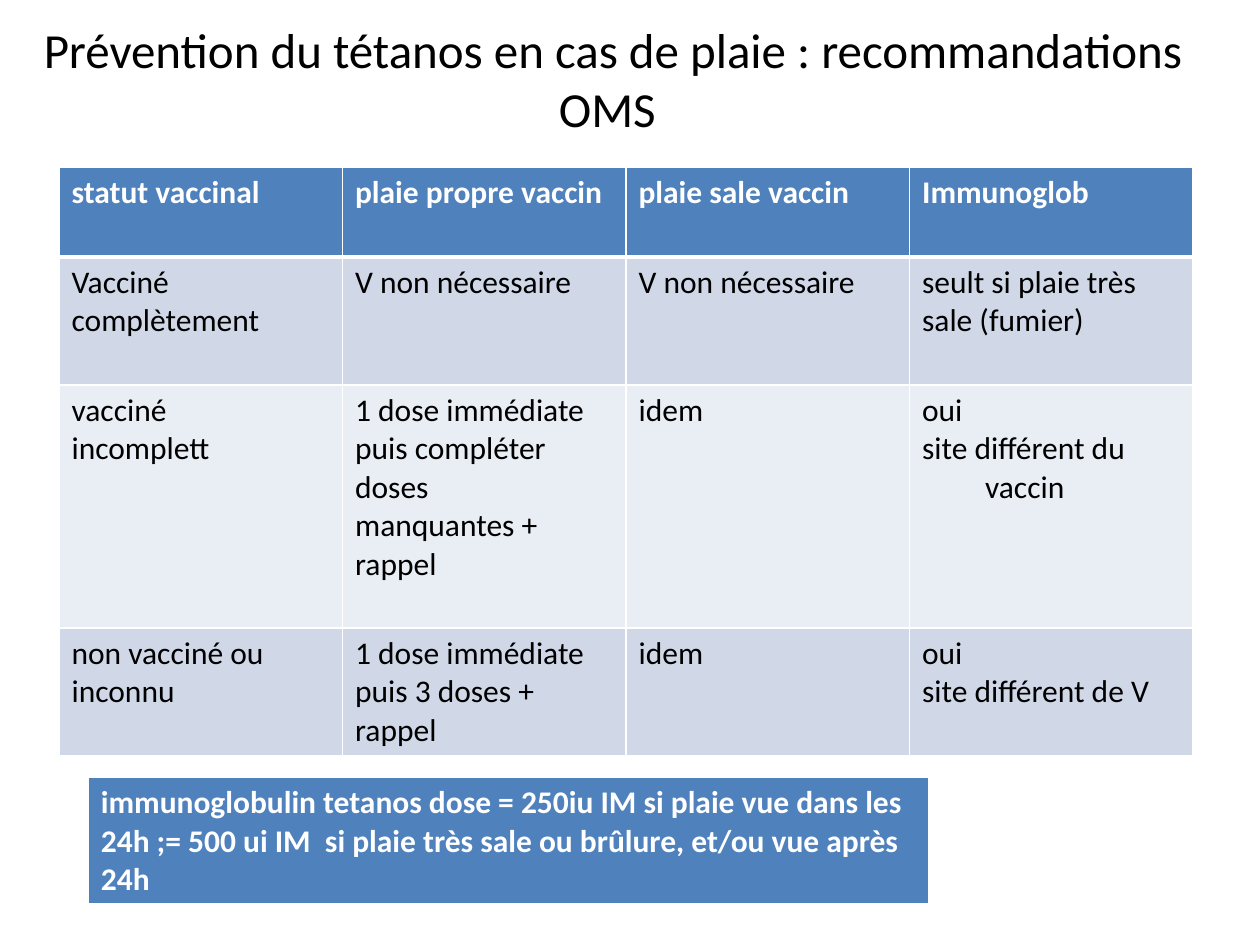
from pptx import Presentation
from pptx import util as u
from pptx.dml.color import RGBColor
from pptx.enum import text as t
from pptx.oxml import parse_xml
from pptx.oxml.ns import nsdecls

HUES = {"ink": "000000", "white": "FFFFFF", "head": "4F81BD",
        "odd": "D0D8E8", "even": "E9EDF4"}
FONT = "Calibri"
GRID = [
    ["statut vaccinal", "plaie propre vaccin", "plaie sale vaccin", "Immunoglob"],
    ["Vacciné complètement", "V non nécessaire", "V non nécessaire",
     "seult si plaie très sale (fumier)"],
    ["vacciné\nincomplett",
     "1 dose immédiate\npuis compléter doses\nmanquantes + rappel",
     "idem", "oui\nsite différent du \v\tvaccin"],
    ["non vacciné ou inconnu", "1 dose immédiate\npuis 3 doses + rappel",
     "idem", "oui\nsite différent de V"],
]
NOTE = [["immunoglobulin tetanos dose = 250iu IM si plaie vue dans les 24h "
         ";= 500 ui IM  si plaie très sale ou brûlure, et/ou vue après 24h"]]


def write(frame, words, size=18, hue="ink", bold=False, align=t.PP_ALIGN.LEFT):
    """Fill a text frame, one paragraph per line, in one format."""
    frame.text = words
    for para in frame.paragraphs:
        para.alignment = align
        for run in para.runs:
            font = run.font
            font.name, font.size, font.bold = FONT, u.Pt(size), bold
            font.color.rgb = RGBColor.from_string(HUES[hue])


class Deck:
    """Holds the style and the current slide."""

    def __init__(self):
        """Start a deck with one title-only slide."""
        self.prs = Presentation()
        self.prs.slide_width, self.prs.slide_height = u.Cm(25.4), u.Cm(19.05)
        self.slide = self.prs.slides.add_slide(self.prs.slide_layouts[5])

    def title(self, words, left, top, width, height):
        """Place and format the title."""
        box = self.slide.shapes.title
        box.left, box.top = u.Cm(left), u.Cm(top)
        box.width, box.height = u.Cm(width), u.Cm(height)
        frame = box.text_frame
        frame.auto_size = t.MSO_AUTO_SIZE.NONE
        frame.vertical_anchor = t.MSO_ANCHOR.MIDDLE
        write(frame, words, size=28, align=t.PP_ALIGN.CENTER)

    def edge(self, cell, side, width):
        """Draw one white border of a cell."""
        cell._tc.get_or_add_tcPr().append(parse_xml(
            f'<a:ln{side} {nsdecls("a")} w="{u.Pt(width)}"><a:solidFill>'
            f'<a:srgbClr val="{HUES["white"]}"/></a:solidFill></a:ln{side}>'))

    def table(self, rows, left, top, width, heights):
        """Add a table with a header row and banded rows below."""
        cols = len(rows[0])
        grid = self.slide.shapes.add_table(
            len(rows), cols, u.Cm(left), u.Cm(top),
            u.Cm(width), u.Cm(sum(heights))).table
        for col in grid.columns:
            col.width = u.Cm(width / cols)
        for r, (row, high) in enumerate(zip(rows, heights)):
            grid.rows[r].height = u.Cm(high)
            fill = "head" if r == 0 else "odd" if r % 2 else "even"
            for c, words in enumerate(row):
                cell = grid.cell(r, c)
                for side in "LRTB":
                    thick = (r, side) in ((0, "B"), (1, "T"))
                    self.edge(cell, side, 3 if thick else 1)
                cell.fill.solid()
                cell.fill.fore_color.rgb = RGBColor.from_string(HUES[fill])
                write(cell.text_frame, words, bold=r == 0,
                      hue="ink" if r else "white")


def main():
    """Build and save the slide."""
    deck = Deck()
    deck.title("Prévention du tétanos en cas de plaie : recommandations OMS ",
               0.58, 0.76, 23.55, 1.63)
    deck.table(GRID, 1.19, 3.38, 22.86, [1.8, 2.58, 4.9, 2.56])
    deck.table(NOTE, 1.78, 15.67, 16.94, [2.54])
    deck.prs.save("out.pptx")


if __name__ == "__main__":
    main()
